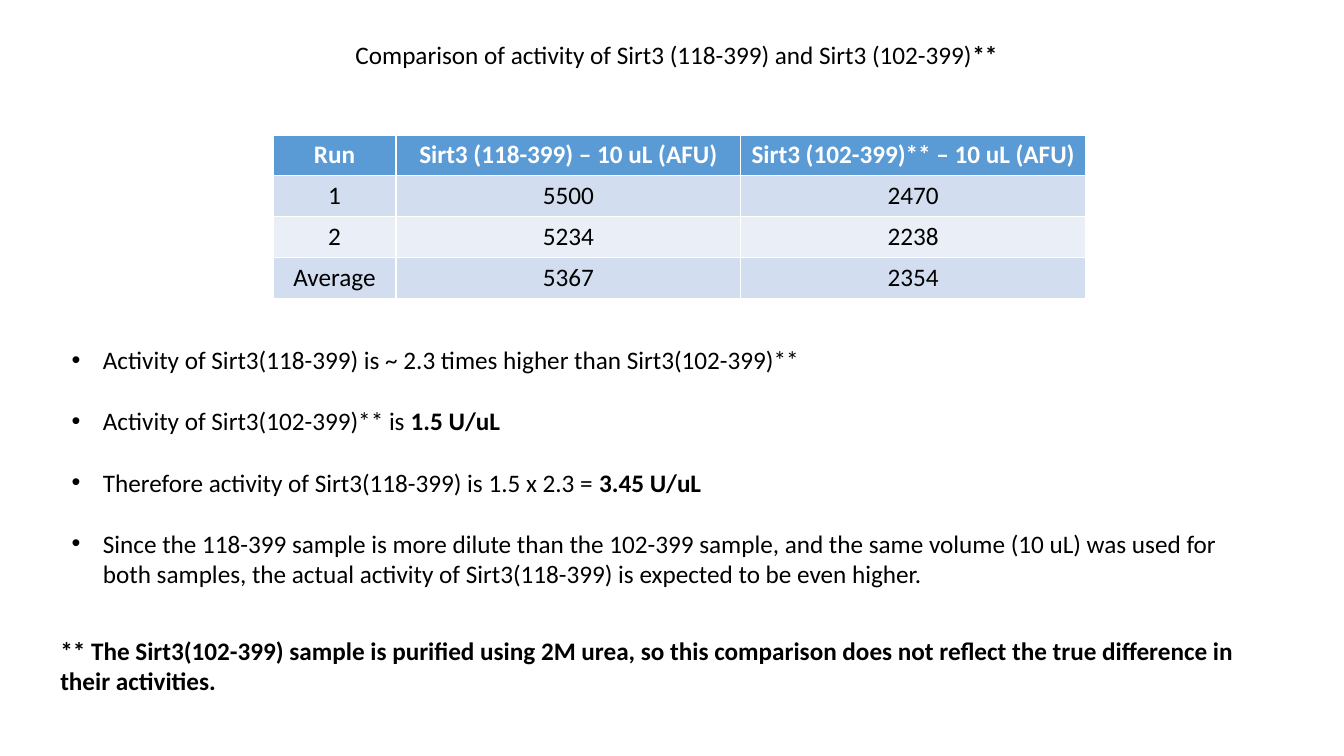
"""Build the slide comparing the activity of two Sirt3 constructs."""
from pptx import Presentation
from pptx.dml.color import RGBColor
from pptx.enum import text
from pptx.util import Cm, Pt

TITLE = [("Comparison of activity of Sirt3 (118-399) and Sirt3 (102-399)", False), ("** ", True)]
ACTIVITY = [
    ("Run", "Sirt3 (118-399) – 10 uL (AFU)", "Sirt3 (102-399)** – 10 uL (AFU)"),
    ("1", "5500", "2470"),
    ("2", "5234", "2238"),
    ("Average", "5367", "2354"),
]
FINDINGS = [
    [("Activity of Sirt3(118-399) is ~ 2.3 times higher than Sirt3(102-399)**", False)],
    [("Activity of Sirt3(102-399)** is ", False), ("1.5 U/uL", True)],
    [("Therefore activity of Sirt3(118-399) is 1.5 x 2.3 = ", False), ("3.45 U/uL", True)],
    [("Since the 118-399 sample is more dilute than the 102-399 sample, and the same volume "
      "(10 uL) was used for both samples, the actual activity of Sirt3(118-399) is expected "
      "to be even higher.", False)],
]
FOOTNOTE = [("** The Sirt3(102-399) sample is purified using 2M urea, so this comparison does "
             "not reflect the true difference in their activities.", True)]

BLACK = RGBColor(0x00, 0x00, 0x00)
WHITE = RGBColor(0xFF, 0xFF, 0xFF)
HEADER_BLUE = RGBColor(0x5B, 0x9B, 0xD5)
BANDS = [RGBColor(0xEA, 0xEF, 0xF7), RGBColor(0xD2, 0xDE, 0xEF)]

TITLE_AREA = Cm(8.61), Cm(0.86), Cm(17.02), Cm(1.02)
FINDINGS_AREA = Cm(1.55), Cm(8.56), Cm(29.85), Cm(6.4)
FOOTNOTE_AREA = Cm(1.27), Cm(15.88), Cm(31.29), Cm(1.8)
TABLE_LEFT, TABLE_TOP = Cm(6.88), Cm(3.4)
COLUMN_WIDTHS = [Cm(3.1), Cm(8.69), Cm(8.69)]
ROW_HEIGHT = Cm(1.03)
BULLET_INDENT = Cm(0.79)
FINDING_GAP = Pt(22)


def write(para, spans, color=BLACK, align=text.PP_ALIGN.LEFT):
    """Fill a paragraph with (wording, bold) spans."""
    para.alignment = align
    para.space_before = Pt(0)
    for wording, bold in spans:
        span = para.add_run()
        span.text = wording
        span.font.name = "Calibri"
        span.font.size = Pt(18)
        span.font.bold = bold
        span.font.color.rgb = color


def place(box, area, wrap=True):
    """Position a text shape and return its top-anchored frame."""
    box.left, box.top, box.width, box.height = area
    frame = box.text_frame
    frame.word_wrap = wrap
    frame.auto_size = text.MSO_AUTO_SIZE.NONE
    frame.vertical_anchor = text.MSO_ANCHOR.TOP
    return frame


def add_activity_table(page):
    """Add the table of measured activity."""
    table = page.shapes.add_table(
        len(ACTIVITY), len(COLUMN_WIDTHS), TABLE_LEFT, TABLE_TOP,
        sum(COLUMN_WIDTHS), ROW_HEIGHT * len(ACTIVITY)).table
    for column, width in zip(table.columns, COLUMN_WIDTHS):
        column.width = width
    for r, values in enumerate(ACTIVITY):
        header = r == 0
        table.rows[r].height = ROW_HEIGHT
        for c, value in enumerate(values):
            cell = table.cell(r, c)
            cell.fill.solid()
            cell.fill.fore_color.rgb = HEADER_BLUE if header else BANDS[r % 2]
            write(cell.text_frame.paragraphs[0], [(value, header)],
                  WHITE if header else BLACK, text.PP_ALIGN.CENTER)


def add_findings(box):
    """Write the bulleted findings into the body placeholder."""
    frame = place(box, FINDINGS_AREA)
    for i, spans in enumerate(FINDINGS):
        para = frame.add_paragraph() if i else frame.paragraphs[0]
        write(para, spans)
        para.space_before = FINDING_GAP if i else Pt(0)
        properties = para._p.get_or_add_pPr()
        properties.set("marL", str(BULLET_INDENT))
        properties.set("indent", str(-BULLET_INDENT))


def main():
    """Assemble and save the deck."""
    deck = Presentation()
    deck.slide_width, deck.slide_height = Cm(33.87), Cm(19.05)
    page = deck.slides.add_slide(deck.slide_layouts[1])
    title = place(page.shapes.title, TITLE_AREA, wrap=False)
    write(title.paragraphs[0], TITLE, align=text.PP_ALIGN.CENTER)
    add_activity_table(page)
    add_findings(page.placeholders[1])
    footnote = place(page.shapes.add_textbox(*FOOTNOTE_AREA), FOOTNOTE_AREA)
    write(footnote.paragraphs[0], FOOTNOTE)
    deck.save("out.pptx")


if __name__ == "__main__":
    main()
